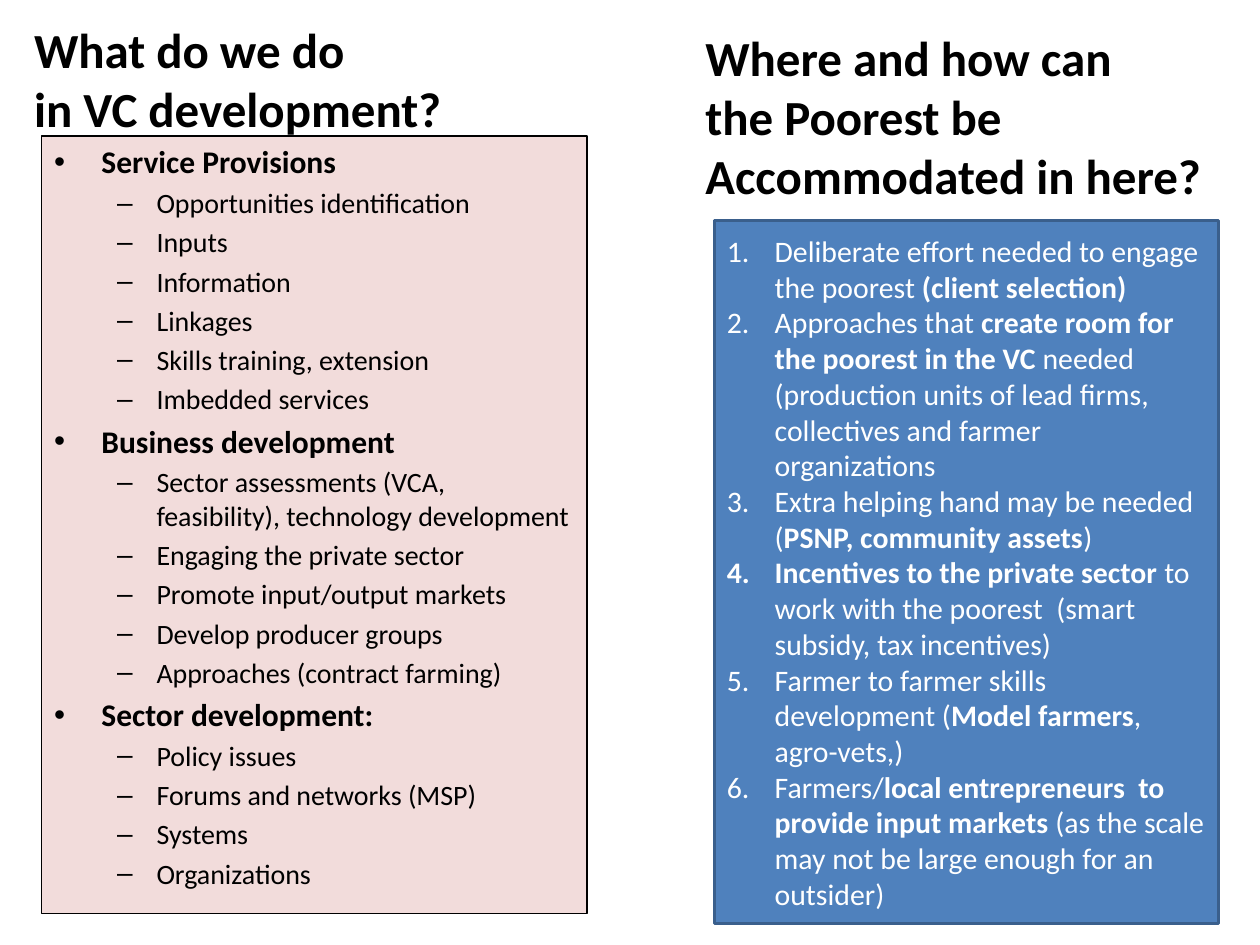
from pptx import Presentation
from pptx.dml.color import RGBColor
from pptx.enum.shapes import MSO_SHAPE
from pptx.enum.text import MSO_ANCHOR, MSO_AUTO_SIZE, PP_ALIGN
from pptx.oxml.xmlchemy import OxmlElement
from pptx.util import Inches, Pt

ACTIVITIES = {
    "Service Provisions": [
        "Opportunities identification", "Inputs", "Information", "Linkages",
        "Skills training, extension", "Imbedded services",
    ],
    "Business development": [
        "Sector assessments (VCA, feasibility), technology development",
        "Engaging the private sector", "Promote input/output markets",
        "Develop producer groups", "Approaches (contract farming)",
    ],
    "Sector development:": [
        "Policy issues", "Forums and networks (MSP)", "Systems", "Organizations",
    ],
}

# Asterisks enclose the bold words.
ANSWERS = [
    "Deliberate effort needed to engage the poorest *(client selection)*",
    "Approaches that *create room for the poorest in the VC* needed "
    "(production units of lead firms, collectives and farmer organizations",
    "Extra helping hand may be needed (*PSNP, community assets*)",
    "*Incentives to the private sector *to work with the poorest  "
    "(smart subsidy, tax incentives)",
    "Farmer to farmer skills development (*Model farmers*, agro-vets,)",
    "Farmers/*local entrepreneurs  to provide input markets *"
    "(as the scale may not be large enough for an outsider)",
]


def color(value):
    return RGBColor.from_string(value)


class SlideBuilder:
    font = "Calibri"
    heading = {"size": Pt(28), "bold": True}
    group = {"size": Pt(18), "bold": True}
    item = {"size": Pt(16), "bold": False}
    answer = {"size": Pt(17)}

    def __init__(self, page):
        self.page = page

    def place(self, shape, left, top, width, height):
        bounds = {"left": left, "top": top, "width": width, "height": height}
        for name, value in bounds.items():
            setattr(shape, name, Inches(value))

    def paint(self, shape, fill, line, weight):
        shape.fill.solid()
        shape.fill.fore_color.rgb = color(fill)
        shape.line.color.rgb = color(line)
        shape.line.width = Pt(weight)

    def add_span(self, para, text, style, ink="000000"):
        span = para.add_run()
        span.text = text
        for name, value in {"name": self.font, **style}.items():
            setattr(span.font, name, value)
        span.font.color.rgb = color(ink)

    def paragraphs(self, frame, count):
        """Return the first paragraph and as many new ones as are needed."""
        return [frame.paragraphs[0]] + [frame.add_paragraph() for _ in range(count - 1)]

    def title(self, lines, *bounds):
        box = self.page.shapes.title
        self.place(box, *bounds)
        box.text_frame.auto_size = MSO_AUTO_SIZE.NONE
        para = box.text_frame.paragraphs[0]
        para.alignment = PP_ALIGN.LEFT
        for index, line in enumerate(lines):
            if index:
                para.add_line_break()
            self.add_span(para, line, self.heading)

    def outline(self, groups, *bounds):
        box = self.page.placeholders[1]
        self.place(box, *bounds)
        self.paint(box, "F2DCDB", "000000", 0.75)
        box.text_frame.auto_size = MSO_AUTO_SIZE.NONE
        rows = []
        for name, items in groups.items():
            rows.append((0, name, self.group))
            rows += [(1, item, self.item) for item in items]
        for para, (level, text, style) in zip(self.paragraphs(box.text_frame, len(rows)), rows):
            para.level = level
            self.add_span(para, text, style)

    def heading_box(self, lines, *bounds):
        box = self.page.shapes.add_textbox(*map(Inches, bounds))
        frame = box.text_frame
        frame.word_wrap = False
        frame.auto_size = MSO_AUTO_SIZE.SHAPE_TO_FIT_TEXT
        for para, line in zip(self.paragraphs(frame, len(lines)), lines):
            self.add_span(para, line, self.heading)

    def numbered_panel(self, items, *bounds):
        panel = self.page.shapes.add_shape(MSO_SHAPE.RECTANGLE, *map(Inches, bounds))
        panel.shadow.inherit = False
        self.paint(panel, "4F81BD", "3A5F8C", 2)
        frame = panel.text_frame
        frame.word_wrap = True
        frame.vertical_anchor = MSO_ANCHOR.MIDDLE
        for para, item in zip(self.paragraphs(frame, len(items)), items):
            para.alignment = PP_ALIGN.LEFT
            self.number(para)
            for index, text in enumerate(item.split("*")):
                if text:
                    self.add_span(para, text, {**self.answer, "bold": index % 2 == 1}, "FFFFFF")

    def number(self, para):
        properties = para._p.get_or_add_pPr()
        properties.set("marL", str(Inches(0.38)))
        properties.set("indent", str(Inches(-0.38)))
        numbering = OxmlElement("a:buAutoNum")
        numbering.set("type", "arabicPeriod")
        properties.append(numbering)


def main():
    deck = Presentation()
    deck.slide_width, deck.slide_height = Inches(10), Inches(7.5)
    builder = SlideBuilder(deck.slides.add_slide(deck.slide_layouts[1]))
    builder.title(["What do we do ", "in VC development?"], 0.17, 0, 4.5, 1.25)
    builder.outline(ACTIVITIES, 0.33, 1.08, 4.33, 6.17)
    builder.numbered_panel(ANSWERS, 5.67, 1.75, 4, 5.58)
    builder.heading_box(
        ["Where and how can", "the Poorest be", "Accommodated in here?"],
        5.5, 0.17, 4.18, 1.51,
    )
    deck.save("out.pptx")


if __name__ == "__main__":
    main()
